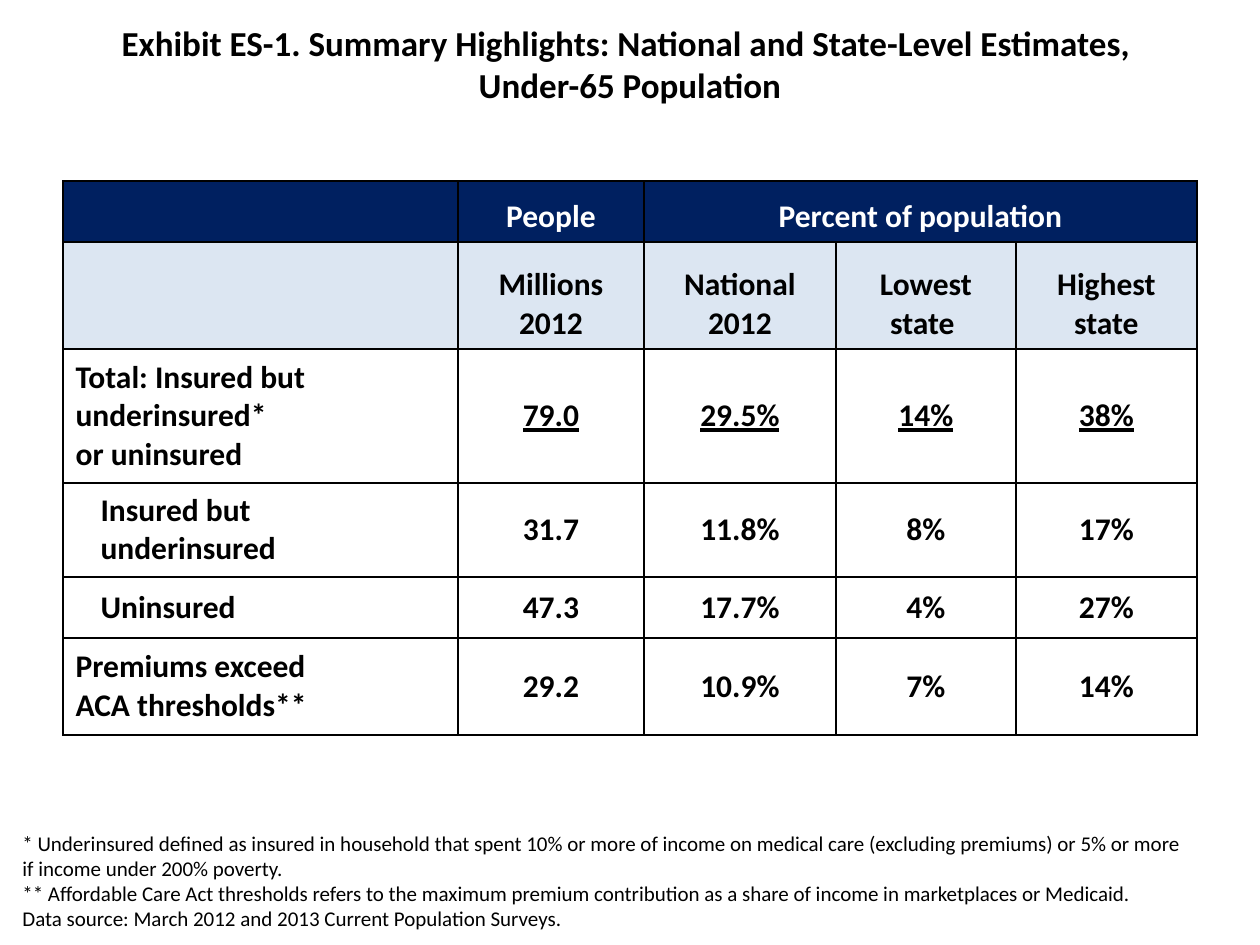
"""Build the summary highlights slide with its table of estimates."""
from lxml.etree import SubElement
from pptx import Presentation
from pptx.dml.color import RGBColor
from pptx.enum.text import MSO_ANCHOR as Anchor, PP_ALIGN as Align
from pptx.oxml.ns import qn
from pptx.util import Pt

TITLE = ("Exhibit ES-1. Summary Highlights: National and State-Level Estimates, \n"
         "Under-65 Population")
ROWS = [
    ["", "People", "Percent of population", "", ""],
    ["", "Millions 2012", "National 2012", "Lowest state ", "Highest state"],
    ["Total: Insured but underinsured* \nor uninsured", "79.0", "29.5%", "14%", "38%"],
    ["Insured but \nunderinsured", "31.7", "11.8%", "8%", "17%"],
    ["Uninsured", "47.3", "17.7%", "4%", "27%"],
    ["Premiums exceed \nACA thresholds**", "29.2", "10.9%", "7%", "14%"],
]
NOTES = [
    "* Underinsured defined as insured in household that spent 10% or more of income "
    "on medical care (excluding premiums) or 5% or more if income under 200% poverty.",
    "** Affordable Care Act thresholds refers to the maximum premium contribution "
    "as a share of income in marketplaces or Medicaid.",
    "Data source: March 2012 and 2013 Current Population Surveys.",
]
WIDTHS = [395, 186, 192, 180, 181]
HEIGHTS = [61, 107, 134, 94, 61, 97]
FILLS = ["002060", "DCE6F2"] + ["FFFFFF"] * 4
HEADS, TOTAL, NESTED = 2, 2, (3, 4)
BLACK, WHITE = "000000", "FFFFFF"


def px(n):
    return round(n * 914400 / 126)


def rgb(code):
    return RGBColor.from_string(code)


def write(para, text, size, color=BLACK, bold=False, align=Align.LEFT):
    para.text = text
    para.alignment = align
    font = para.font
    font.name, font.size, font.bold = "Calibri", Pt(size), bold
    font.color.rgb = rgb(color)


def edge(cell):
    props = cell._tc.get_or_add_tcPr()
    for i, side in enumerate(("lnL", "lnR", "lnT", "lnB")):
        line = props.makeelement(qn("a:" + side), {"w": str(Pt(1))})
        fill = SubElement(line, qn("a:solidFill"))
        SubElement(fill, qn("a:srgbClr"), val=BLACK)
        props.insert(i, line)


def style(cell, text, row, col):
    cell.fill.solid()
    cell.fill.fore_color.rgb = rgb(FILLS[row])
    edge(cell)
    cell.vertical_anchor = Anchor.BOTTOM if row < HEADS else Anchor.MIDDLE
    para = cell.text_frame.paragraphs[0]
    write(para, text, 18, BLACK if row else WHITE, True,
          Align.CENTER if col else Align.LEFT)
    if row == TOTAL and col:
        para.font.underline = True
    if row in NESTED and not col:
        para._p.get_or_add_pPr().set("marL", str(px(25)))


def main():
    deck = Presentation()
    deck.slide_width, deck.slide_height = px(1260), px(945)
    slide = deck.slides.add_slide(deck.slide_layouts[5])

    title = slide.shapes.title
    title.left, title.top, title.width, title.height = map(px, (0, 13, 1260, 100))
    title.text_frame.vertical_anchor = Anchor.MIDDLE
    write(title.text_frame.paragraphs[0], TITLE, 20, bold=True, align=Align.CENTER)

    box = map(px, (63, 181, sum(WIDTHS), sum(HEIGHTS)))
    table = slide.shapes.add_table(len(ROWS), len(WIDTHS), *box).table
    for col, width in zip(table.columns, WIDTHS):
        col.width = px(width)
    for row, height in zip(table.rows, HEIGHTS):
        row.height = px(height)
    for r, row in enumerate(ROWS):
        for c, text in enumerate(row):
            style(table.cell(r, c), text, r, c)
    table.cell(0, 2).merge(table.cell(0, 4))

    notes = slide.shapes.add_textbox(*map(px, (10, 824, 1187, 115))).text_frame
    notes.word_wrap = True
    for i, text in enumerate(NOTES):
        write(notes.add_paragraph() if i else notes.paragraphs[0], text, 12)

    deck.save("out.pptx")


if __name__ == "__main__":
    main()
